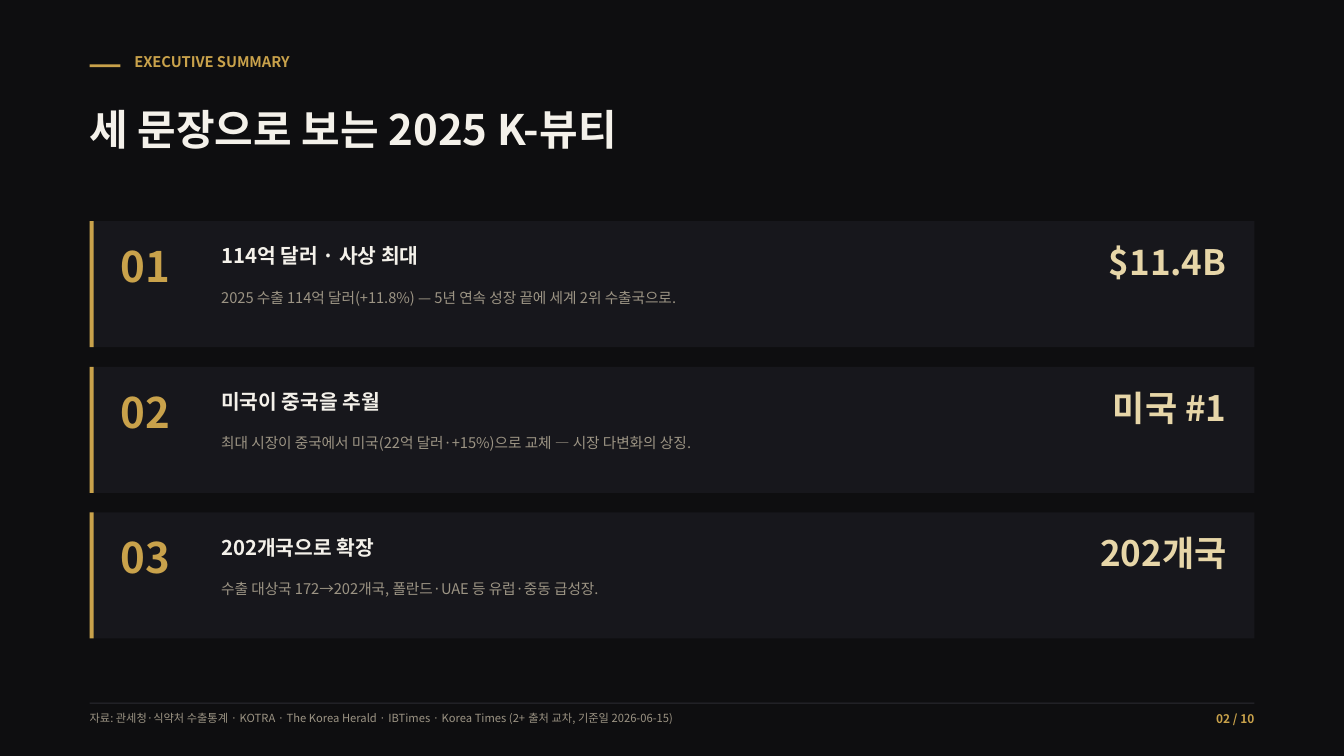
from lxml.etree import SubElement
from pptx import Presentation
from pptx.dml.color import RGBColor
from pptx.enum.shapes import MSO_SHAPE as Shape
from pptx.enum.text import MSO_AUTO_SIZE as AutoSize, PP_ALIGN as Align
from pptx.oxml.ns import qn
from pptx.util import Pt

FONT = "Noto Sans CJK KR"
INK, PANEL, HAIRLINE = "0E0E10", "17171C", "2C2C32"
GOLD, PALE_GOLD, IVORY, MUTED = "C9A24B", "E7D6A8", "F4F1EA", "9C9484"
LEFT, WIDTH = 64, 832
CARD_TOP, CARD_HEIGHT, CARD_GAP = 158, 90, 14

CARDS = [
    ("01", "114억 달러 · 사상 최대",
     "2025 수출 114억 달러(+11.8%) — 5년 연속 성장 끝에 세계 2위 수출국으로.",
     "$11.4B"),
    ("02", "미국이 중국을 추월",
     "최대 시장이 중국에서 미국(22억 달러·+15%)으로 교체 — 시장 다변화의 상징.",
     "미국 #1"),
    ("03", "202개국으로 확장",
     "수출 대상국 172→202개국, 폴란드·UAE 등 유럽·중동 급성장.",
     "202개국"),
]
SOURCE = ("자료: 관세청·식약처 수출통계 · KOTRA · The Korea Herald · IBTimes · "
          "Korea Times (2+ 출처 교차, 기준일 2026-06-15)")


def color(hex_value):
    """Turn a hex string into a colour."""
    return RGBColor.from_string(hex_value)


def add_bar(slide, left, top, width, height, fill):
    """Add a plain filled rectangle."""
    shape = slide.shapes.add_shape(
        Shape.RECTANGLE, Pt(left), Pt(top), Pt(width), Pt(height))
    shape.shadow.inherit = False
    shape.fill.solid()
    shape.fill.fore_color.rgb = color(fill)
    shape.line.fill.background()


def add_text(slide, left, top, width, height, text, size, ink,
             bold=True, align=Align.LEFT, wrap=True):
    """Add a one-paragraph text box without insets."""
    box = slide.shapes.add_textbox(Pt(left), Pt(top), Pt(width), Pt(height))
    frame = box.text_frame
    frame.margin_left = frame.margin_right = 0
    frame.margin_top = frame.margin_bottom = 0
    frame.word_wrap = wrap
    frame.auto_size = AutoSize.SHAPE_TO_FIT_TEXT
    paragraph = frame.paragraphs[0]
    paragraph.text = text
    paragraph.alignment = align
    font = paragraph.font
    font.size = Pt(size)
    font.bold = bold
    font.color.rgb = color(ink)
    font.name = FONT
    properties = paragraph._p.pPr.find(qn("a:defRPr"))
    SubElement(properties, qn("a:ea")).set("typeface", FONT)


def add_header(slide, left, top, width):
    """Add the section label with its dash and the title."""
    add_bar(slide, left, top + 8, 22, 2, GOLD)
    add_text(slide, left + 32, top, 114, 13, "EXECUTIVE SUMMARY", 10.5, GOLD,
             wrap=False)
    add_text(slide, left, top + 36, width, 36, "세 문장으로 보는 2025 K-뷰티", 30, IVORY)


def add_card(slide, left, top, width, height, number, heading, detail, figure):
    """Add one numbered summary card."""
    add_bar(slide, left, top, width, height, PANEL)
    add_bar(slide, left, top, 3, height, GOLD)
    add_text(slide, left + 22, top + 14, 54, 36, number, 30, GOLD)
    add_text(slide, left + 94, top + 16, 558, 17, heading, 14.5, IVORY)
    add_text(slide, left + 94, top + 48, 558, 13, detail, 10.5, MUTED, bold=False)
    add_text(slide, left + width - 168, top + 14, 148, 30, figure, 25, PALE_GOLD,
             align=Align.RIGHT)


def add_footer(slide, left, top, width):
    """Add the hairline, the sources and the page number."""
    add_bar(slide, left, top, width, 0.75, HAIRLINE)
    add_text(slide, left, top + 6, width - 70, 10, SOURCE, 8, MUTED, bold=False)
    add_text(slide, left + width - 70, top + 6, 70, 10, "02 / 10", 8.5, GOLD,
             align=Align.RIGHT)


def main():
    """Build and save the summary slide."""
    presentation = Presentation()
    presentation.slide_width, presentation.slide_height = Pt(960), Pt(540)
    slide = presentation.slides.add_slide(presentation.slide_layouts[6])
    background = slide.background.fill
    background.solid()
    background.fore_color.rgb = color(INK)
    add_header(slide, LEFT, 38, WIDTH)
    for index, card in enumerate(CARDS):
        top = CARD_TOP + index * (CARD_HEIGHT + CARD_GAP)
        add_card(slide, LEFT, top, WIDTH, CARD_HEIGHT, *card)
    add_footer(slide, LEFT, 502, WIDTH)
    presentation.save("out.pptx")


if __name__ == "__main__":
    main()
